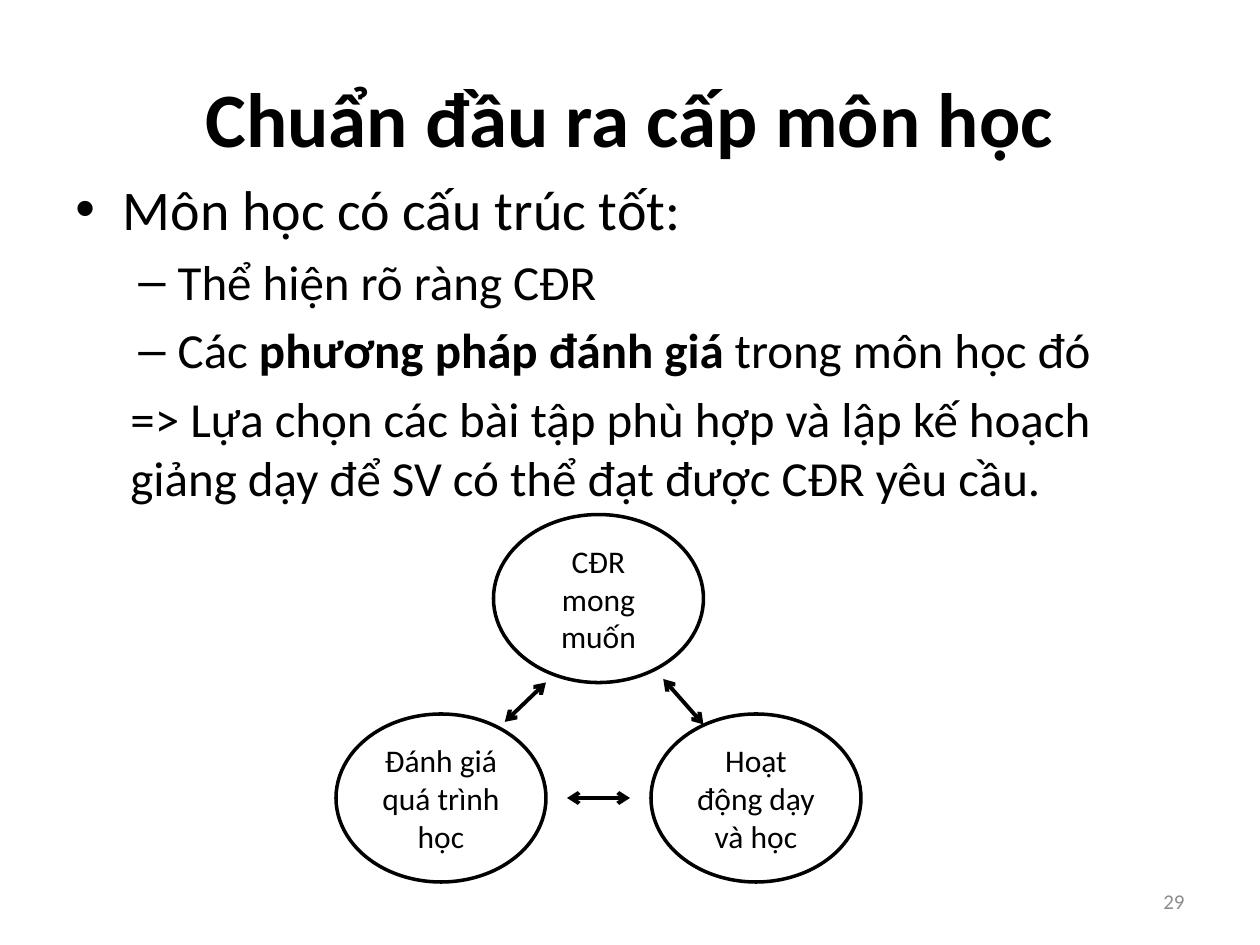
from lxml import etree
from pptx import Presentation
from pptx.dml.color import RGBColor
from pptx.enum.shapes import MSO_CONNECTOR, MSO_SHAPE
from pptx.enum.text import MSO_ANCHOR, PP_ALIGN
from pptx.oxml.ns import qn
from pptx.util import Pt

BLACK = RGBColor(0x00, 0x00, 0x00)
WHITE = RGBColor(0xFF, 0xFF, 0xFF)
GRAY = RGBColor(0x8C, 0x8C, 0x8C)
LEFT, CENTER, RIGHT = PP_ALIGN.LEFT, PP_ALIGN.CENTER, PP_ALIGN.RIGHT
TOP, MIDDLE = MSO_ANCHOR.TOP, MSO_ANCHOR.MIDDLE
OVAL, STRAIGHT = MSO_SHAPE.OVAL, MSO_CONNECTOR.STRAIGHT


class SlideBuilder:
    """Draws text, bullets, ovals and arrows on one slide in a shared style."""

    font = "Calibri"

    def __init__(self, slide):
        self.slide = slide

    def add_runs(self, paragraph, runs, size, color=BLACK, align=LEFT):
        paragraph.alignment = align
        for text, bold in runs:
            run = paragraph.add_run()
            run.text = text
            run.font.name = self.font
            run.font.size = Pt(size)
            run.font.bold = bold
            run.font.color.rgb = color

    def text_box(self, left, top, width, height, anchor=TOP):
        frame = self.slide.shapes.add_textbox(
            Pt(left), Pt(top), Pt(width), Pt(height)).text_frame
        frame.word_wrap = True
        frame.vertical_anchor = anchor
        return frame

    def label(self, box, text, size, color, align, bold=False):
        frame = self.text_box(*box, anchor=MIDDLE)
        self.add_runs(frame.paragraphs[0], [(text, bold)], size, color, align)

    def outline(self, box, items):
        frame = self.text_box(*box)
        for number, (runs, size, margin, indent, bullet) in enumerate(items):
            paragraph = frame.add_paragraph() if number else frame.paragraphs[0]
            paragraph.space_before = Pt(size * 0.2)
            self.add_runs(paragraph, runs, size)
            properties = paragraph._p.get_or_add_pPr()
            properties.set("marL", str(Pt(margin)))
            properties.set("indent", str(Pt(indent)))
            if bullet:
                etree.SubElement(properties, qn("a:buFont"), typeface="Arial")
                etree.SubElement(properties, qn("a:buChar"), char=bullet)

    def oval(self, left, top, width, height, text):
        oval = self.slide.shapes.add_shape(
            OVAL, Pt(left), Pt(top), Pt(width), Pt(height))
        oval.shadow.inherit = False
        oval.fill.solid()
        oval.fill.fore_color.rgb = WHITE
        oval.line.color.rgb = BLACK
        oval.line.width = Pt(2)
        frame = oval.text_frame
        frame.word_wrap = True
        frame.vertical_anchor = MIDDLE
        self.add_runs(frame.paragraphs[0], [(text, False)], 18, align=CENTER)

    def double_arrow(self, x1, y1, x2, y2):
        arrow = self.slide.shapes.add_connector(
            STRAIGHT, Pt(x1), Pt(y1), Pt(x2), Pt(y2))
        arrow.line.color.rgb = BLACK
        arrow.line.width = Pt(2.25)
        line = arrow.line._get_or_add_ln()
        for end in ("a:headEnd", "a:tailEnd"):
            etree.SubElement(line, qn(end), type="arrow")
        etree.SubElement(arrow._element.spPr, qn("a:effectLst"))


def main():
    deck = Presentation()
    deck.slide_width, deck.slide_height = Pt(720), Pt(540)
    builder = SlideBuilder(deck.slides.add_slide(deck.slide_layouts[6]))

    builder.label((36, 21.6, 648, 90), "Chuẩn đầu ra cấp môn học",
                  44, BLACK, CENTER, bold=True)
    builder.outline((36, 96, 648, 356), [
        ([("Môn học có cấu trúc tốt:", False)], 32, 27, -27, "•"),
        ([("Thể hiện rõ ràng CĐR", False)], 28, 58.5, -22.5, "–"),
        ([("Các ", False), ("phương pháp đánh giá", True),
          (" trong môn học đó", False)], 28, 58.5, -22.5, "–"),
        ([("=> Lựa chọn các bài tập phù hợp và lập kế hoạch giảng dạy "
           "để SV có thể đạt được CĐR yêu cầu.", False)], 28, 31.5, 0, None),
    ])
    builder.label((516, 500.5, 168, 28.75), "29", 12, GRAY, RIGHT)

    for left, top, text in (
        (282, 294, "CĐR mong muốn"),
        (372, 408, "Hoạt động dạy và học"),
        (192, 408, "Đánh giá quá trình học"),
    ):
        builder.oval(left, top, 120, 96, text)

    for ends in (
        (379, 388, 402, 414),
        (324, 456, 360, 456),
        (288.5, 412.5, 312, 390),
    ):
        builder.double_arrow(*ends)

    deck.save("out.pptx")


if __name__ == "__main__":
    main()
